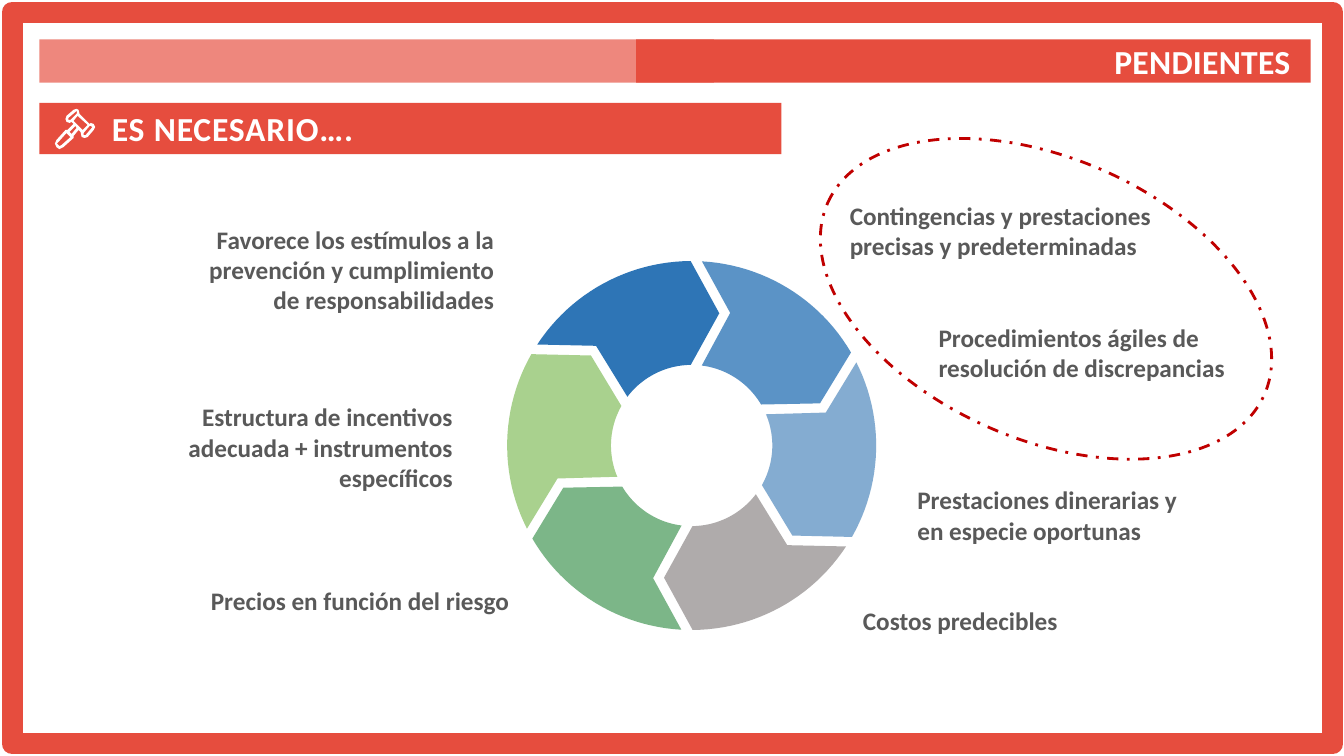
import math

import lxml.etree
import pptx
import pptx.dml.color
import pptx.enum.dml
import pptx.enum.shapes
import pptx.enum.text
import pptx.oxml.ns
import pptx.util

RGBColor = pptx.dml.color.RGBColor
SHAPES = pptx.enum.shapes.MSO_SHAPE
ALIGN = pptx.enum.text.PP_ALIGN
ANCHOR = pptx.enum.text.MSO_ANCHOR

PX = 9144  # one px is a hundredth of an inch
RED = RGBColor(0xE6, 0x4D, 0x3E)
DARK_RED = RGBColor(0xC0, 0x00, 0x00)
WHITE = RGBColor(0xFF, 0xFF, 0xFF)
PALE = RGBColor(0xF4, 0xF4, 0xF4)
TEXT_GREY = RGBColor(0x59, 0x59, 0x59)
BLUE = RGBColor(0x2E, 0x75, 0xB6)
LIGHT_GREEN = RGBColor(0xA9, 0xD1, 0x8E)
GREEN = RGBColor(0x7C, 0xB6, 0x88)
GREY = RGBColor(0xAF, 0xAB, 0xAB)


class Board:
    font = "Calibri"

    def __init__(self, slide):
        self.slide = slide

    def paint(self, shape, fill=None, opacity=100):
        shape.shadow.inherit = False
        shape.line.fill.background()
        if fill is None:
            shape.fill.background()
            return
        shape.fill.solid()
        shape.fill.fore_color.rgb = fill
        if opacity < 100:
            color = shape._element.spPr.find(".//" + pptx.oxml.ns.qn("a:srgbClr"))
            alpha = lxml.etree.SubElement(color, pptx.oxml.ns.qn("a:alpha"))
            alpha.set("val", str(opacity * 1000))

    def preset(self, kind, box, fill=None, opacity=100):
        shape = self.slide.shapes.add_shape(kind, *[side * PX for side in box])
        self.paint(shape, fill, opacity)
        return shape

    def outline(self, kind, box, color, width, dash=None, rotation=0):
        shape = self.preset(kind, box)
        shape.line.color.rgb = color
        shape.line.width = pptx.util.Pt(width)
        shape.line.dash_style = dash
        shape.rotation = rotation

    def polygon(self, contours, fill, opacity=100):
        builder = None
        for contour in contours:
            start, *rest = [(x * PX, y * PX) for x, y in contour]
            if builder is None:
                builder = self.slide.shapes.build_freeform(*start, scale=1.0)
            else:
                builder.move_to(*start)
            builder.add_line_segments(rest, close=True)
        self.paint(builder.convert_to_shape(), fill, opacity)

    def set_text(self, shape, text, size, color, align, anchor):
        frame = shape.text_frame
        frame.word_wrap = True
        frame.vertical_anchor = anchor
        frame.text = text
        paragraph = frame.paragraphs[0]
        paragraph.alignment = align
        run = paragraph.runs[0]
        run.font.name = self.font
        run.font.size = pptx.util.Pt(size)
        run.font.bold = True
        run.font.color.rgb = color
        return run

    def banner(self, box, text, align, left, right, spacing):
        shape = self.preset(SHAPES.RECTANGLE, box, RED)
        run = self.set_text(shape, text, 24, WHITE, align, ANCHOR.MIDDLE)
        run._r.get_or_add_rPr().set("spc", str(spacing))
        frame = shape.text_frame
        frame.margin_left, frame.margin_right = left * PX, right * PX
        frame.margin_top = frame.margin_bottom = 0
        frame.paragraphs[0].space_before = pptx.util.Pt(1)

    def label(self, box, text, align, anchor):
        shape = self.slide.shapes.add_textbox(*[side * PX for side in box])
        self.set_text(shape, text, 18, TEXT_GREY, align, anchor)
        shape.text_frame.auto_size = pptx.enum.text.MSO_AUTO_SIZE.SHAPE_TO_FIT_TEXT


def ring_point(radius, degrees):
    """Point on the wheel, in px, with degrees clockwise from the top."""
    angle = math.radians(degrees)
    return 686 + radius * math.sin(angle), 442 - radius * math.cos(angle)


def ring_arc(radius, first, last, steps=24):
    return [ring_point(radius, first + (last - first) * i / steps) for i in range(steps + 1)]


def wheel_arrow(position):
    turn = 60 * position
    return (ring_arc(183, turn + 3.2, turn + 59.7)
            + [ring_point(134, turn + 71.8)]
            + ring_arc(80, turn + 59.4, turn + 7.2)
            + [ring_point(137, turn + 16.2)])


GAVEL = [
    # outer edge
    [(76, 108), (73, 109), (66, 115), (65, 118), (66, 121), (69, 122), (71, 121), (73, 123),
     (67, 129), (65, 129), (56, 139), (54.5, 142.5), (56, 146), (59, 148), (63, 146),
     (73, 137), (73, 135), (78, 129), (80, 131), (81, 136), (84, 137), (87, 136),
     (93, 129), (94.5, 126), (93, 123), (90, 122), (89, 123), (79, 113), (78, 109)],
    # caps, head, neck and handle
    [(76, 110), (76.5, 111.5), (76, 113), (70, 119), (68, 119), (68, 117), (75, 111)],
    [(90, 125), (91.5, 126), (91, 127), (85, 134), (83, 134), (83, 132), (89, 125)],
    [(77, 115), (87, 124), (82, 129), (73, 120)],
    [(75, 125), (76, 127), (71, 133), (69, 131)],
    [(66, 132), (70, 136), (61, 144), (59, 145), (58, 144), (56.5, 142.5), (58, 141)],
]

# position on the wheel, colour, opacity
WHEEL = [
    (1, PALE, 100), (0, BLUE, 78), (1, BLUE, 56), (5, BLUE, 100),
    (4, LIGHT_GREEN, 100), (3, GREEN, 100), (2, GREY, 100),
]

LEFT_LABELS = [
    ((187, 217, 313, 101),
     "Favorece los estímulos a la prevención y cumplimiento de responsabilidades"),
    ((146, 393, 313, 101), "Estructura de incentivos adecuada + instrumentos específicos"),
    ((146, 576, 369, 40), "Precios en función del riesgo"),
]
RIGHT_LABELS = [
    ((846, 596, 272, 40), "Costos predecibles"),
    ((900, 476, 288, 71), "Prestaciones dinerarias y en especie oportunas"),
    ((921, 315, 309, 71), "Procedimientos ágiles de resolución de discrepancias"),
    ((833, 194, 374, 71), "Contingencias y prestaciones precisas y predeterminadas"),
]


def main():
    deck = pptx.Presentation()
    deck.slide_width, deck.slide_height = 1333 * PX, 750 * PX
    board = Board(deck.slides.add_slide(deck.slide_layouts[6]))

    # Title bands and frame
    board.preset(SHAPES.RECTANGLE, (39, 39, 669, 43), RED, 67)
    board.banner((631, 39, 669, 43), "PENDIENTES", ALIGN.RIGHT, 0, 20, 20)
    board.banner((39, 102, 736, 51), "ES NECESARIO….", ALIGN.LEFT, 72, 0, 60)
    board.polygon(GAVEL, WHITE)
    board.outline(SHAPES.RECTANGLE, (12, 12, 1310, 726), RED, 15)

    # Wheel of six arrows
    for position, color, opacity in WHEEL:
        board.polygon([wheel_arrow(position)], color, opacity)

    # Labels around the wheel
    for box, text in LEFT_LABELS:
        board.label(box, text, ALIGN.RIGHT, ANCHOR.MIDDLE)
    for box, text in RIGHT_LABELS:
        board.label(box, text, ALIGN.LEFT, ANCHOR.TOP)

    # Highlight around the two main labels
    board.outline(SHAPES.OVAL, (801, 157, 473, 279), DARK_RED, 2,
                  pptx.enum.dml.MSO_LINE.DASH_DOT, 23.6)

    deck.save("out.pptx")


if __name__ == "__main__":
    main()
